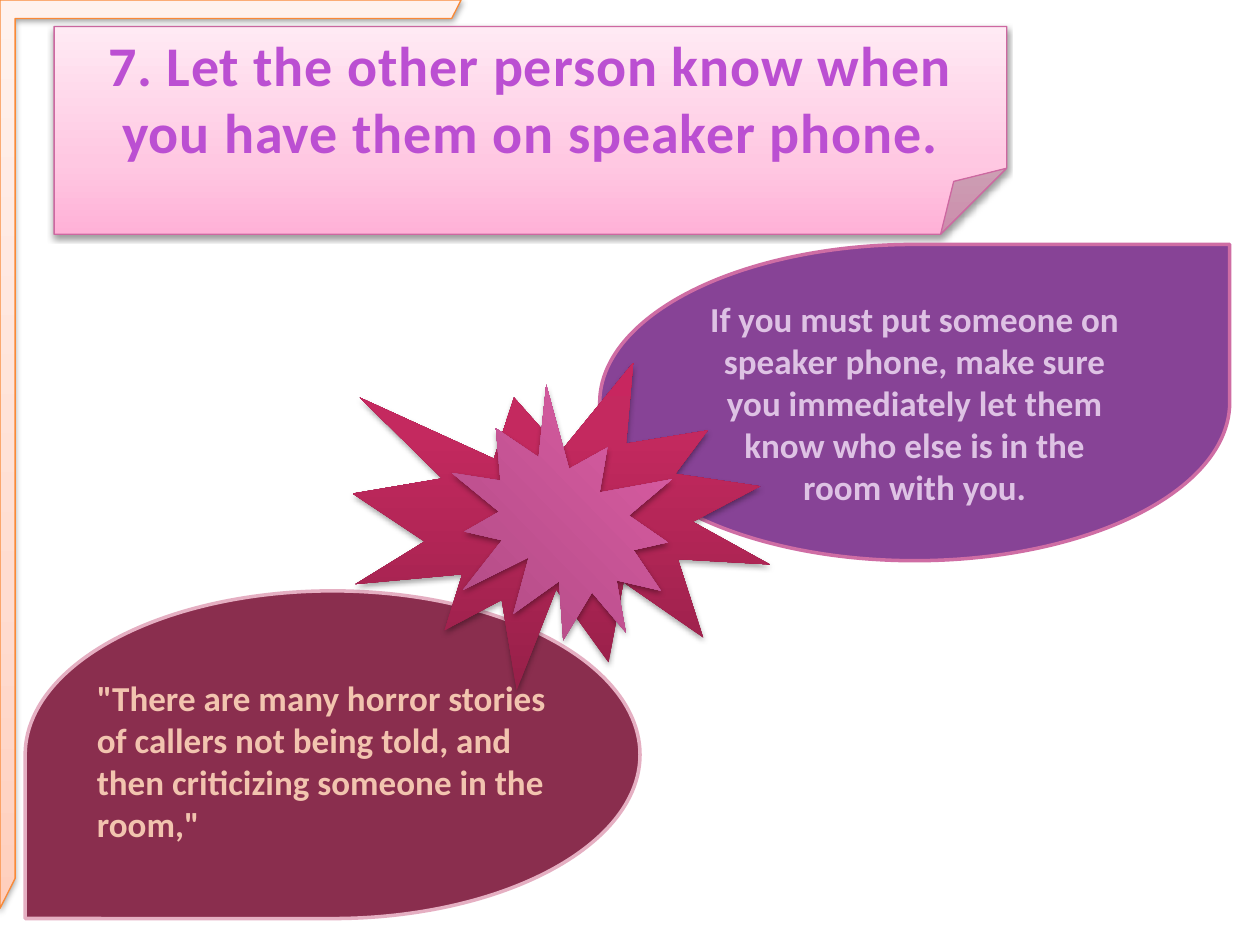
from dataclasses import dataclass
from typing import Optional

from lxml import etree
from pptx import Presentation
from pptx import util as u
from pptx.dml.color import RGBColor
from pptx.enum import shapes, text
from pptx.oxml import ns

SHAPE = shapes.MSO_SHAPE


@dataclass(frozen=True)
class Gradient:
    stops: tuple
    angle: int = 270


@dataclass(frozen=True)
class Shadow:
    opacity: int
    blur: float
    distance: float


@dataclass(frozen=True)
class Theme:
    font: str = "Calibri"
    title_size: int = 32
    body_size: int = 20
    title_ink: Gradient = Gradient(((25, "BB4FD2"), (100, "863598")), 90)
    advice_ink: str = "DEC2E4"
    quote_ink: str = "F2C4AF"
    note: Gradient = Gradient(((0, "FFB1D7"), (35, "FFC8E2"), (100, "FFEAF4")))
    note_edge: str = "CD68A1"
    advice: str = "874396"
    advice_edge: str = "CF6DA4"
    quote: str = "8A2E4E"
    quote_edge: str = "E5AFC2"
    burst: Gradient = Gradient(((0, "972049"), (80, "C4295F"), (100, "C8265F")))
    core: Gradient = Gradient(((0, "A5467C"), (80, "D75BA1"), (100, "DA59A2")))
    frame: Gradient = Gradient(((0, "FFCFBD"), (35, "FFDDD1"), (100, "FFF2EE")))
    frame_edge: str = "F98937"
    panel_shadow: Shadow = Shadow(38, 3.15, 1.57)
    burst_shadow: Shadow = Shadow(35, 3.15, 1.81)


@dataclass(frozen=True)
class Box:
    """Left, top, width and height in percent of the slide."""
    x: float
    y: float
    w: float
    h: float


@dataclass(frozen=True)
class Caption:
    words: str
    size: int
    ink: object
    align: text.PP_ALIGN = text.PP_ALIGN.CENTER
    spacing: float = 0
    grow: bool = True


@dataclass(frozen=True)
class Figure:
    kind: SHAPE
    box: Box
    fill: object
    edge: Optional[str] = None
    edge_width: float = 0.75
    shadow: Optional[Shadow] = None
    adjust: tuple = ()
    rotation: float = 0
    flipped: bool = False
    caption: Optional[Caption] = None


def sub(parent, tag: str, **attrs):
    values = {key: str(value) for key, value in attrs.items()}
    return etree.SubElement(parent, ns.qn(tag), values)


def gradient_xml(gradient: Gradient):
    root = etree.Element(ns.qn("a:gradFill"), rotWithShape="1")
    stops = sub(root, "a:gsLst")
    for share, color in gradient.stops:
        sub(sub(stops, "a:gs", pos=share * 1000), "a:srgbClr", val=color)
    sub(root, "a:lin", ang=gradient.angle * 60000, scaled=0)
    return root


def place(prs, box: Box) -> tuple:
    width, height = prs.slide_width, prs.slide_height
    return tuple(int(share * side / 100) for share, side in
                 ((box.x, width), (box.y, height), (box.w, width), (box.h, height)))


def write(sp, caption: Caption, theme: Theme) -> None:
    tf = sp.text_frame
    tf.word_wrap = True
    if caption.grow:
        tf.auto_size = text.MSO_AUTO_SIZE.SHAPE_TO_FIT_TEXT
    p = tf.paragraphs[0]
    p.alignment = caption.align
    r = p.add_run()
    r.text = caption.words
    r.font.name, r.font.size, r.font.bold = theme.font, u.Pt(caption.size), True
    props = r._r.get_or_add_rPr()
    if isinstance(caption.ink, Gradient):
        props.insert(0, gradient_xml(caption.ink))
    else:
        r.font.color.rgb = RGBColor.from_string(caption.ink)
    if caption.spacing:
        props.set("spc", str(int(caption.spacing * 100)))


def draw(prs, s, figure: Figure, theme: Theme) -> None:
    sp = s.shapes.add_shape(figure.kind, *place(prs, figure.box))
    sp.rotation = figure.rotation
    props = sp._element.spPr
    geometry = props.find(ns.qn("a:prstGeom"))
    if figure.adjust:
        guides = geometry.find(ns.qn("a:avLst"))
        guides.clear()
        for name, share in figure.adjust:
            sub(guides, "a:gd", name=name, fmla=f"val {round(share * 1000)}")
    if figure.flipped:
        props.xfrm.set("flipH", "1")
        props.xfrm.set("flipV", "1")
    if isinstance(figure.fill, Gradient):
        geometry.addnext(gradient_xml(figure.fill))
    else:
        sp.fill.solid()
        sp.fill.fore_color.rgb = RGBColor.from_string(figure.fill)
    if figure.edge:
        sp.line.color.rgb = RGBColor.from_string(figure.edge)
        sp.line.width = u.Pt(figure.edge_width)
    else:
        sp.line.fill.background()
    sp.shadow.inherit = False
    if figure.shadow:
        cast = sub(props.find(ns.qn("a:effectLst")), "a:outerShdw",
                   blurRad=u.Pt(figure.shadow.blur), dist=u.Pt(figure.shadow.distance),
                   dir=90 * 60000, rotWithShape=0)
        sub(sub(cast, "a:srgbClr", val="000000"), "a:alpha", val=figure.shadow.opacity * 1000)
    if figure.caption:
        sp.text_frame.vertical_anchor = text.MSO_ANCHOR.MIDDLE
        write(sp, figure.caption, theme)


def main() -> None:
    theme = Theme()
    prs = Presentation()
    prs.slide_width, prs.slide_height = u.Inches(10), u.Inches(7.5)
    s = prs.slides.add_slide(prs.slide_layouts[6])

    title = Caption("7. Let the other person know when you have them on speaker phone.",
                    theme.title_size, theme.title_ink, spacing=0.5, grow=False)
    advice = Caption("If you must put someone on speaker phone, make sure you immediately "
                     "let them know who else is in the room with you.",
                     theme.body_size, theme.advice_ink)
    quote = Caption('"There are many horror stories of callers not being told, and then '
                    'criticizing someone in the room,"',
                    theme.body_size, theme.quote_ink, text.PP_ALIGN.LEFT)

    panels = (
        Figure(SHAPE.FOLDED_CORNER, Box(4.3, 2.8, 75.6, 22), theme.note, theme.note_edge,
               shadow=theme.panel_shadow, adjust=(("adj", 31.8),), caption=title),
        Figure(SHAPE.TEAR, Box(47.6, 25.87, 50, 33.47), theme.advice, theme.advice_edge, 2,
               caption=advice),
        Figure(SHAPE.TEAR, Box(2, 62.53, 48.8, 34.67), theme.quote, theme.quote_edge, 2,
               flipped=True),
    )
    ornaments = (
        Figure(SHAPE.EXPLOSION1, Box(28, 38.4, 33.1, 34.67), theme.burst,
               shadow=theme.burst_shadow),
        Figure(SHAPE.EXPLOSION1, Box(35.2, 44, 18.8, 24), theme.core,
               shadow=theme.burst_shadow, rotation=45.8),
        Figure(SHAPE.HALF_FRAME, Box(0, 0, 36.6, 96.13), theme.frame, theme.frame_edge,
               shadow=theme.panel_shadow, adjust=(("adj1", 4), ("adj2", 3.3))),
    )

    for panel in panels:
        draw(prs, s, panel, theme)
    write(s.shapes.add_textbox(*place(prs, Box(6.7, 70.93, 37.8, 19.33))), quote, theme)
    for ornament in ornaments:
        draw(prs, s, ornament, theme)
    prs.save("out.pptx")


if __name__ == "__main__":
    main()
